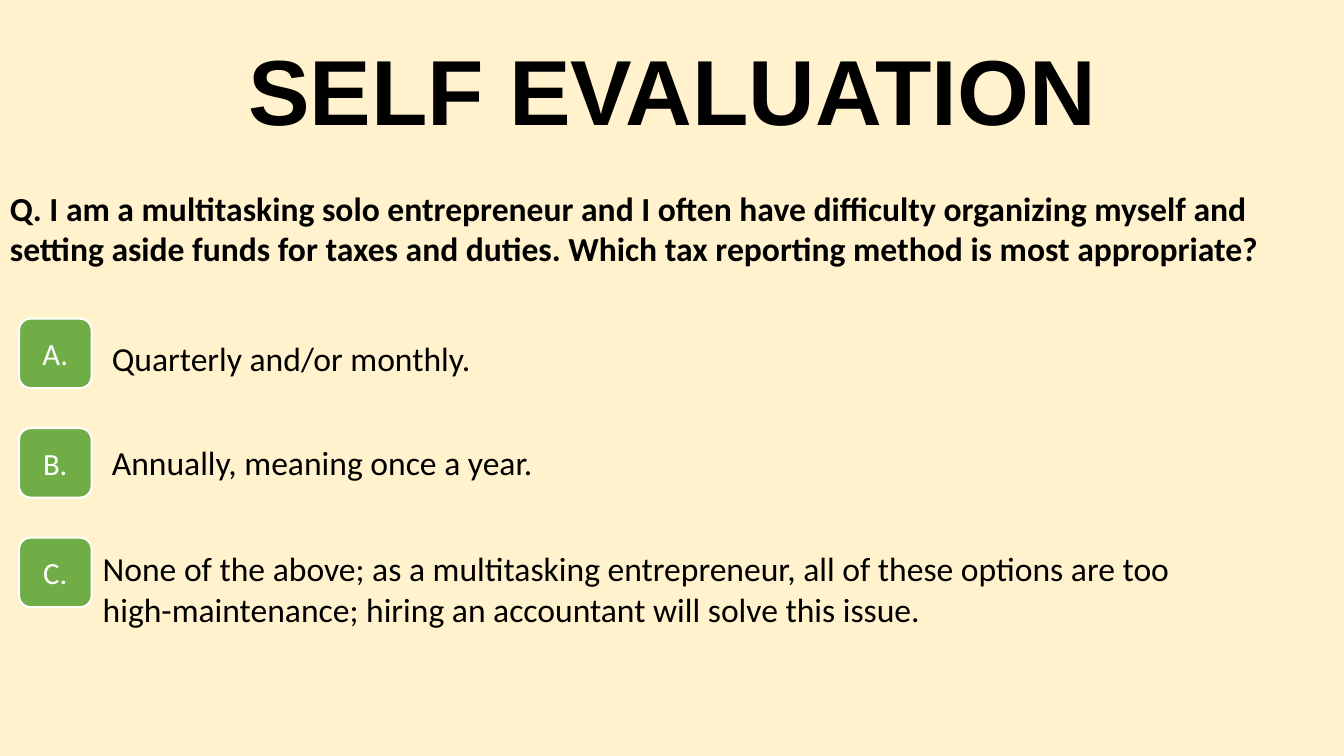
from dataclasses import dataclass

import pptx
import pptx.dml.color
import pptx.enum.shapes
import pptx.enum.text
import pptx.slide
import pptx.text.text
import pptx.util

Cm = pptx.util.Cm
Pt = pptx.util.Pt
Align = pptx.enum.text.PP_ALIGN
Anchor = pptx.enum.text.MSO_ANCHOR

CREAM, GREEN, WHITE, BLACK = "FFF2CC", "70AD47", "FFFFFF", "000000"
BADGE_LEFT, BADGE_TOP, BADGE_STEP = 0.48, 8.03, 2.76
BADGE_WIDTH, BADGE_HEIGHT = 1.83, 1.75


@dataclass
class Box:
    left: float
    top: float
    width: float
    height: float


@dataclass
class Style:
    size: int = 24
    font: str = "Calibri"
    color: str = BLACK
    bold: bool = False
    center: bool = False
    spacing: float = 1.0


@dataclass
class Answer:
    letter: str
    text: str
    box: Box
    wrap: bool = True


TITLE = Style(66, "Arial", bold=True, center=True, spacing=0.9)
QUERY = Style(bold=True)
BADGE = Style(22, color=WHITE, center=True)

ANSWERS = [
    Answer("A.", "Quarterly and/or monthly.", Box(2.57, 8.38, 17.17, 1.27)),
    Answer("B.", "Annually, meaning once a year.",
           Box(2.57, 11.02, 11.23, 1.27), wrap=False),
    Answer("C.", "None of the above; as a multitasking entrepreneur, all of these "
           "options are too high-maintenance; hiring an accountant will solve this issue.",
           Box(2.34, 13.69, 28.52, 2.31)),
]


def paint(value: str) -> pptx.dml.color.RGBColor:
    return pptx.dml.color.RGBColor.from_string(value)


def place(box: Box) -> tuple[int, int, int, int]:
    return Cm(box.left), Cm(box.top), Cm(box.width), Cm(box.height)


def write(frame: pptx.text.text.TextFrame, text: str, style: Style, wrap: bool = True) -> None:
    """Put one styled run in the frame; centred text is also centred vertically."""
    frame.word_wrap = wrap
    frame.vertical_anchor = Anchor.MIDDLE if style.center else Anchor.TOP
    line = frame.paragraphs[0]
    line.alignment = Align.CENTER if style.center else Align.LEFT
    line.line_spacing = style.spacing
    run = line.add_run()
    run.text = text
    run.font.size = Pt(style.size)
    run.font.name = style.font
    run.font.bold = style.bold
    run.font.color.rgb = paint(style.color)


def add_text(slide: pptx.slide.Slide, box: Box, text: str, style: Style,
             wrap: bool = True) -> None:
    write(slide.shapes.add_textbox(*place(box)).text_frame, text, style, wrap)


def add_badge(slide: pptx.slide.Slide, box: Box, letter: str) -> None:
    kind = pptx.enum.shapes.MSO_SHAPE.ROUNDED_RECTANGLE
    badge = slide.shapes.add_shape(kind, *place(box))
    badge.shadow.inherit = False
    badge.fill.solid()
    badge.fill.fore_color.rgb = paint(GREEN)
    badge.line.color.rgb = paint(WHITE)
    badge.line.width = Pt(1.5)
    write(badge.text_frame, letter, BADGE)


def main() -> None:
    deck = pptx.Presentation()
    deck.slide_width, deck.slide_height = Cm(33.87), Cm(19.05)
    slide = deck.slides.add_slide(deck.slide_layouts[6])
    slide.background.fill.solid()
    slide.background.fill.fore_color.rgb = paint(CREAM)

    add_text(slide, Box(2.34, 0.58, 29.21, 3.68), "SELF EVALUATION", TITLE)
    add_text(slide, Box(0, 4.6, 34.11, 2.31),
             "Q. I am a multitasking solo entrepreneur and I often have difficulty "
             "organizing myself and setting aside funds for taxes and duties. "
             "Which tax reporting method is most appropriate?", QUERY)

    for row, answer in enumerate(ANSWERS):
        top = BADGE_TOP + row * BADGE_STEP
        add_badge(slide, Box(BADGE_LEFT, top, BADGE_WIDTH, BADGE_HEIGHT), answer.letter)
        add_text(slide, answer.box, answer.text, Style(), answer.wrap)

    deck.save("out.pptx")


if __name__ == "__main__":
    main()
